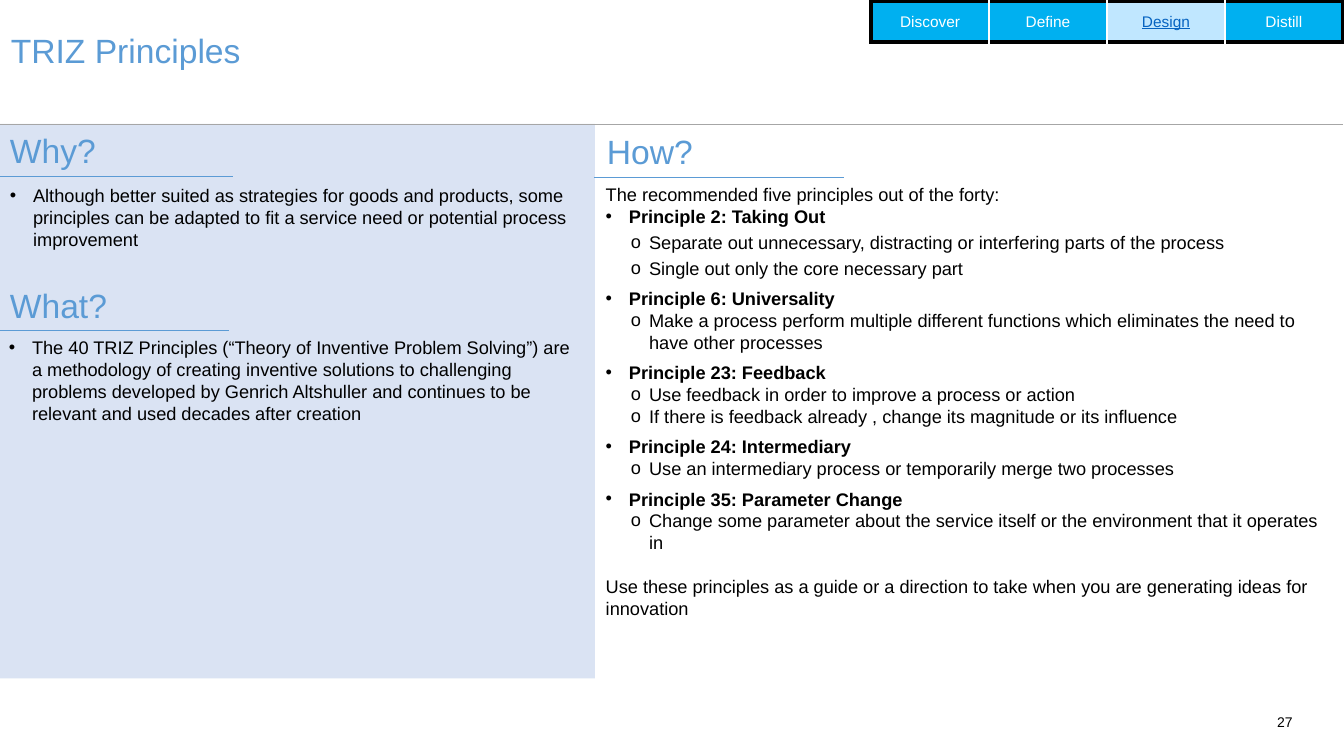
from dataclasses import dataclass

import pptx
import pptx.dml.color
import pptx.enum.shapes
import pptx.enum.text
import pptx.oxml
import pptx.oxml.ns
import pptx.util
from pptx.util import Inches

RGB = pptx.dml.color.RGBColor
ALIGN = pptx.enum.text.PP_ALIGN
AUTO_SIZE = pptx.enum.text.MSO_AUTO_SIZE


@dataclass(frozen=True)
class Theme:
    font: str = "Arial"
    black: str = "000000"
    white: str = "FFFFFF"
    accent: str = "5B9BD5"
    divider: str = "A6A6A6"
    panel: str = "DAE3F3"
    tab: str = "00B0F0"
    active_tab: str = "C0E7FF"
    link: str = "0563C1"
    heading_size: float = 24
    body_size: float = 13
    tab_size: float = 11
    number_size: float = 10
    rule_width: float = 0.5


THEME = Theme()


@dataclass(frozen=True)
class Item:
    text: str
    bullet: str = ""
    bold: bool = False
    before: float = 0
    after: float = 0


@dataclass(frozen=True)
class TextBlock:
    left: float
    top: float
    width: float
    height: float
    items: tuple[Item, ...]
    size: float = THEME.body_size
    color: str = THEME.black
    wrap: bool = True
    align: ALIGN = ALIGN.LEFT
    inset: bool = True


@dataclass(frozen=True)
class Rule:
    start: float
    end: float
    y: float
    color: str = THEME.accent


def principle(text: str, after: float = 0) -> Item:
    return Item(text, "•", bold=True, after=after)


def step(text: str, after: float = 0) -> Item:
    return Item(text, "o", after=after)


def heading(text: str, left: float, top: float, width: float, height: float = 0.51,
            wrap: bool = False) -> TextBlock:
    return TextBlock(left, top, width, height, (Item(text),),
                     THEME.heading_size, THEME.accent, wrap)


HOW_ITEMS = (
    Item("The recommended five principles out of the forty:"),
    principle("Principle 2: Taking Out", 3),
    step("Separate out unnecessary, distracting or interfering parts of the process", 3),
    step("Single out only the core necessary part", 6),
    principle("Principle 6: Universality"),
    step("Make a process perform multiple different functions which eliminates the need "
         "to have other processes", 6),
    principle("Principle 23: Feedback"),
    step("Use feedback in order to improve a process or action"),
    step("If there is feedback already , change its magnitude or its influence", 6),
    principle("Principle 24: Intermediary"),
    step("Use an intermediary process or temporarily merge two processes", 6),
    principle("Principle 35: Parameter Change"),
    step("Change some parameter about the service itself or the environment that it "
         "operates in"),
    Item("Use these principles as a guide or a direction to take when you are generating "
         "ideas for innovation", before=15.5),
)
WHY_ITEM = Item(
    "Although better suited as strategies for goods and products, some principles can be "
    "adapted to fit a service need or potential process improvement", "•")
WHAT_ITEM = Item(
    "The 40 TRIZ Principles (“Theory of Inventive Problem Solving”) are a methodology of "
    "creating inventive solutions to challenging problems developed by Genrich Altshuller "
    "and continues to be relevant and used decades after creation", "•")

TEXT_BLOCKS = (
    heading("TRIZ Principles", 0.01, 0.25, 8.16, 0.5, wrap=True),
    heading("Why?", 0, 1.24, 1.07),
    heading("What?", 0, 2.78, 1.19),
    heading("How?", 5.92, 1.25, 1.22, wrap=True),
    TextBlock(0, 1.78, 5.89, 0.76, (WHY_ITEM,)),
    TextBlock(-0.01, 3.29, 5.77, 0.98, (WHAT_ITEM,)),
    TextBlock(5.91, 1.77, 7.4, 4.46, HOW_ITEMS),
    TextBlock(12.48, 7.08, 0.34, 0.17, (Item("27"),), THEME.number_size,
              align=ALIGN.RIGHT, inset=False),
)
RULES = (
    Rule(-0.02, 2.31, 1.75),
    Rule(-0.02, 2.27, 3.28),
    Rule(5.89, 8.37, 1.76),
    Rule(-0.02, 13.32, 1.23, THEME.divider),
)
STAGES = ("Discover", "Define", "Design", "Distill")
ACTIVE_STAGE = "Design"


def add_run(para, text: str, size: float, color: str) -> "pptx.text.text.Font":
    span = para.add_run()
    span.text = text
    span.font.name = THEME.font
    span.font.size = pptx.util.Pt(size)
    span.font.color.rgb = RGB.from_string(color)
    return span.font


def set_bullet(para, bullet: str) -> None:
    indent, hanging = (0.43, 0.18) if bullet == "o" else (0.23, 0.23)
    para.level = 1 if bullet == "o" else 0
    properties = para._p.get_or_add_pPr()
    properties.set("marL", str(Inches(indent)))
    properties.set("indent", str(-Inches(hanging)))
    for tag, key, value in (("buFont", "typeface", THEME.font), ("buChar", "char", bullet)):
        pptx.oxml.ns.qn("a:" + tag)
        element = properties.makeelement(pptx.oxml.ns.qn("a:" + tag), {key: value})
        properties.append(element)


def add_text(page, block: TextBlock) -> None:
    box = page.shapes.add_textbox(Inches(block.left), Inches(block.top),
                                  Inches(block.width), Inches(block.height))
    frame = box.text_frame
    frame.word_wrap = block.wrap
    frame.auto_size = AUTO_SIZE.SHAPE_TO_FIT_TEXT
    if not block.inset:
        frame.margin_left = frame.margin_right = frame.margin_top = frame.margin_bottom = 0
    for index, item in enumerate(block.items):
        para = frame.add_paragraph() if index else frame.paragraphs[0]
        para.alignment = block.align
        if item.bullet:
            set_bullet(para, item.bullet)
        para.space_before = pptx.util.Pt(item.before)
        para.space_after = pptx.util.Pt(item.after)
        add_run(para, item.text, block.size, block.color).bold = item.bold


def add_rule(page, rule: Rule) -> None:
    line = page.shapes.add_connector(pptx.enum.shapes.MSO_CONNECTOR.STRAIGHT,
                                     Inches(rule.start), Inches(rule.y),
                                     Inches(rule.end), Inches(rule.y))
    line.line.color.rgb = RGB.from_string(rule.color)
    line.line.width = pptx.util.Pt(THEME.rule_width)
    properties = line._element.spPr
    properties.append(properties.makeelement(pptx.oxml.ns.qn("a:effectLst"), {}))


def set_borders(cell, outer_sides: str) -> None:
    """Draw thick black borders on the named sides and thin white ones elsewhere."""
    properties = cell._tc.get_or_add_tcPr()
    for position, side in enumerate("LRTB"):
        color, width = (THEME.black, 3) if side in outer_sides else (THEME.white, 1)
        properties.insert(position, pptx.oxml.parse_xml(
            f'<a:ln{side} {pptx.oxml.ns.nsdecls("a")} w="{pptx.util.Pt(width)}">'
            f'<a:solidFill><a:srgbClr val="{color}"/></a:solidFill></a:ln{side}>'))


def add_stage_tabs(page) -> None:
    table = page.shapes.add_table(1, len(STAGES), Inches(8.64), Inches(0.01),
                                  Inches(1.17 * len(STAGES)), Inches(0.41)).table
    for index, stage in enumerate(STAGES):
        active = stage == ACTIVE_STAGE
        cell = table.cell(0, index)
        cell.vertical_anchor = pptx.enum.text.MSO_ANCHOR.MIDDLE
        cell.fill.solid()
        cell.fill.fore_color.rgb = RGB.from_string(THEME.active_tab if active else THEME.tab)
        para = cell.text_frame.paragraphs[0]
        para.alignment = ALIGN.CENTER
        font = add_run(para, stage, THEME.tab_size, THEME.link if active else THEME.white)
        font.bold = False
        font.underline = active
        edges = {0: "L", len(STAGES) - 1: "R"}
        set_borders(cell, "TB" + edges.get(index, ""))


def add_left_panel(page) -> None:
    panel = page.shapes.add_shape(pptx.enum.shapes.MSO_SHAPE.RECTANGLE,
                                  0, Inches(1.23), Inches(5.9), Inches(5.5))
    panel.shadow.inherit = False
    panel.fill.solid()
    panel.fill.fore_color.rgb = RGB.from_string(THEME.panel)
    panel.line.fill.background()


def main() -> None:
    deck = pptx.Presentation()
    deck.slide_width, deck.slide_height = Inches(13.33), Inches(7.5)
    page = deck.slides.add_slide(deck.slide_layouts[6])
    add_left_panel(page)
    for rule in RULES:
        add_rule(page, rule)
    for block in TEXT_BLOCKS:
        add_text(page, block)
    add_stage_tabs(page)
    deck.save("out.pptx")


if __name__ == "__main__":
    main()
